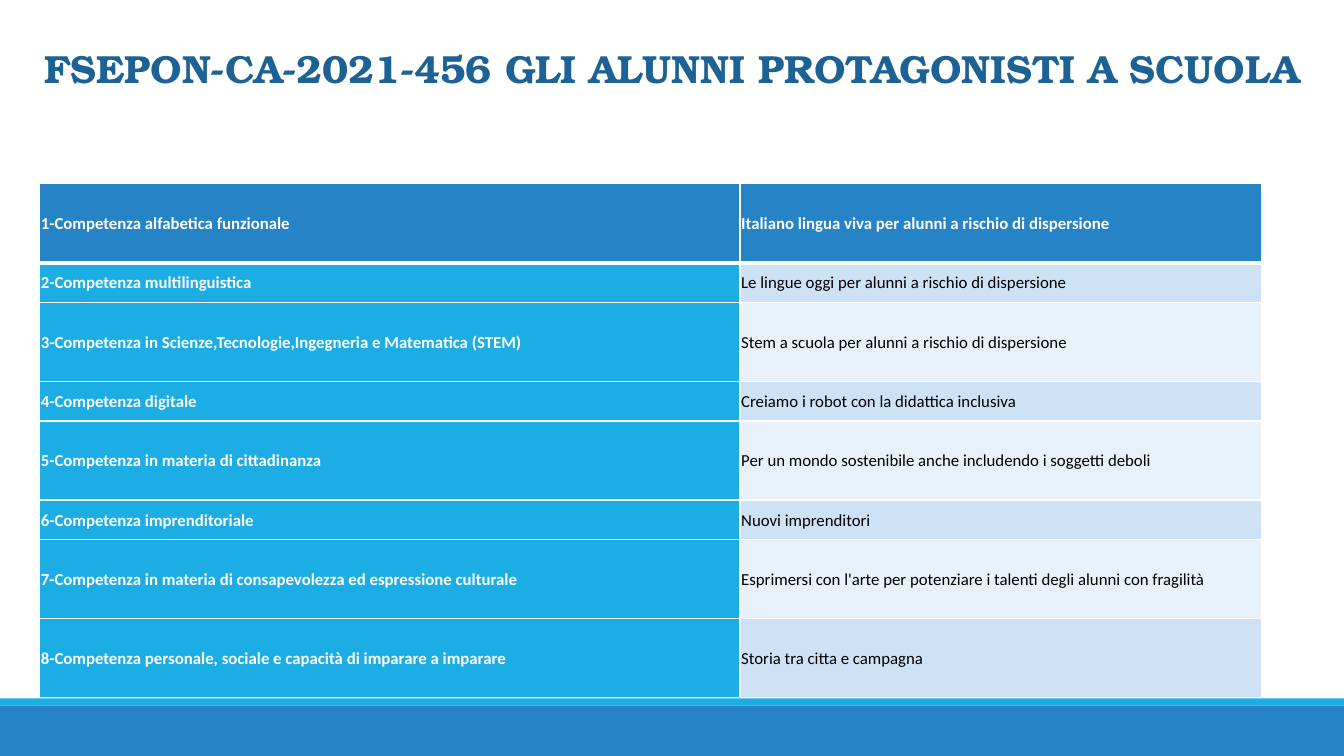
from lxml import etree
from pptx import Presentation
from pptx.dml.color import RGBColor
from pptx.enum.shapes import MSO_SHAPE
from pptx.enum.text import MSO_ANCHOR, PP_ALIGN
from pptx.oxml.ns import qn
from pptx.util import Cm, Pt

RECTANGLE = MSO_SHAPE.RECTANGLE
MIDDLE = MSO_ANCHOR.MIDDLE
TOP = MSO_ANCHOR.TOP
CENTER = PP_ALIGN.CENTER

WHITE = RGBColor(0xFF, 0xFF, 0xFF)
BLACK = RGBColor(0x00, 0x00, 0x00)
BLUE = RGBColor(0x26, 0x83, 0xC6)
CYAN = RGBColor(0x1C, 0xAD, 0xE4)
NAVY = RGBColor(0x1D, 0x62, 0x94)
BANDS = (RGBColor(0xCD, 0xE3, 0xF5), RGBColor(0xE8, 0xF1, 0xFA))

SLIDE_W, SLIDE_H = Cm(33.87), Cm(19.05)
COLUMN_WIDTHS = (Cm(17.65), Cm(13.15))
TALL, SHORT = Cm(1.99), Cm(1)
TITLE = "FSEPON-CA-2021-456 GLI ALUNNI PROTAGONISTI A SCUOLA"
MODULES = (
    (TALL, "1-Competenza alfabetica funzionale",
     "Italiano lingua viva per alunni a rischio di dispersione"),
    (SHORT, "2-Competenza multilinguistica",
     "Le lingue oggi per alunni a rischio di dispersione"),
    (TALL, "3-Competenza in Scienze,Tecnologie,Ingegneria e Matematica (STEM)",
     "Stem a scuola per alunni a rischio di dispersione"),
    (SHORT, "4-Competenza digitale",
     "Creiamo i robot con la didattica inclusiva"),
    (TALL, "5-Competenza in materia di cittadinanza",
     "Per un mondo sostenibile anche includendo i soggetti deboli"),
    (SHORT, "6-Competenza imprenditoriale",
     "Nuovi imprenditori"),
    (TALL, "7-Competenza in materia di consapevolezza ed espressione culturale",
     "Esprimersi con l'arte per potenziare i talenti degli alunni con fragilità"),
    (TALL, "8-Competenza personale, sociale e capacità di imparare a imparare",
     "Storia tra citta e campagna"),
)


def set_all(obj, values):
    for name, value in values.items():
        setattr(obj, name, value)


def add_run(p, text, color, **font):
    r = p.add_run()
    r.text = text
    set_all(r.font, font)
    r.font.color.rgb = color


def add_bar(slide, top, height, color):
    sp = slide.shapes.add_shape(RECTANGLE, 0, top, SLIDE_W, height)
    sp.shadow.inherit = False
    sp.fill.solid()
    sp.fill.fore_color.rgb = color
    sp.line.fill.background()


def add_title(slide):
    sp = slide.shapes.add_textbox(Cm(0.71), Cm(0.99), Cm(32.44), Cm(4.45))
    tf = sp.text_frame
    set_all(tf, {"word_wrap": True, "vertical_anchor": TOP})
    p = tf.paragraphs[0]
    p.alignment = CENTER
    add_run(p, TITLE, NAVY, name="TeX Gyre Bonum", size=Pt(28), bold=True)


def set_borders(cell, **widths):
    tc_pr = cell._tc.get_or_add_tcPr()
    for side in "LRTB":
        ln = etree.SubElement(tc_pr, qn(f"a:ln{side}"), w=str(Pt(widths.get(side, 1))))
        fill = etree.SubElement(ln, qn("a:solidFill"))
        etree.SubElement(fill, qn("a:srgbClr"), val=str(WHITE))


def fill_cell(cell, text, fill, color, bold):
    margins = {f"margin_{side}": Cm(0.03) for side in ("left", "right", "top", "bottom")}
    set_all(cell, {"vertical_anchor": MIDDLE, **margins})
    cell.fill.solid()
    cell.fill.fore_color.rgb = fill
    p = cell.text_frame.paragraphs[0]
    set_all(p, {"line_spacing": 1.07, "space_after": Pt(8)})
    add_run(p, text, color, name="Calibri", size=Pt(12), bold=bold)


def add_modules_table(slide):
    height = sum(row[0] for row in MODULES)
    frame = slide.shapes.add_table(len(MODULES), len(COLUMN_WIDTHS), Cm(1), Cm(4.63),
                                   sum(COLUMN_WIDTHS), height)
    table = frame.table
    table.first_col = True
    for column, width in zip(table.columns, COLUMN_WIDTHS):
        column.width = width
    for i, (row_height, *texts) in enumerate(MODULES):
        table.rows[i].height = row_height
        header_edge = {0: {"B": 3}, 1: {"T": 3}}.get(i, {})
        for j, text in enumerate(texts):
            cell = table.cell(i, j)
            set_borders(cell, **header_edge)
            if i == 0:
                fill_cell(cell, text, BLUE, WHITE, True)
            elif j == 0:
                fill_cell(cell, text, CYAN, WHITE, True)
            else:
                fill_cell(cell, text, BANDS[(i - 1) % 2], BLACK, False)


def main():
    prs = Presentation()
    set_all(prs, {"slide_width": SLIDE_W, "slide_height": SLIDE_H})
    slide = prs.slides.add_slide(prs.slide_layouts[6])
    add_bar(slide, Cm(17.78), Cm(1.27), BLUE)
    add_bar(slide, Cm(17.6), Cm(0.18), CYAN)
    add_title(slide)
    add_modules_table(slide)
    prs.save("out.pptx")


if __name__ == "__main__":
    main()
